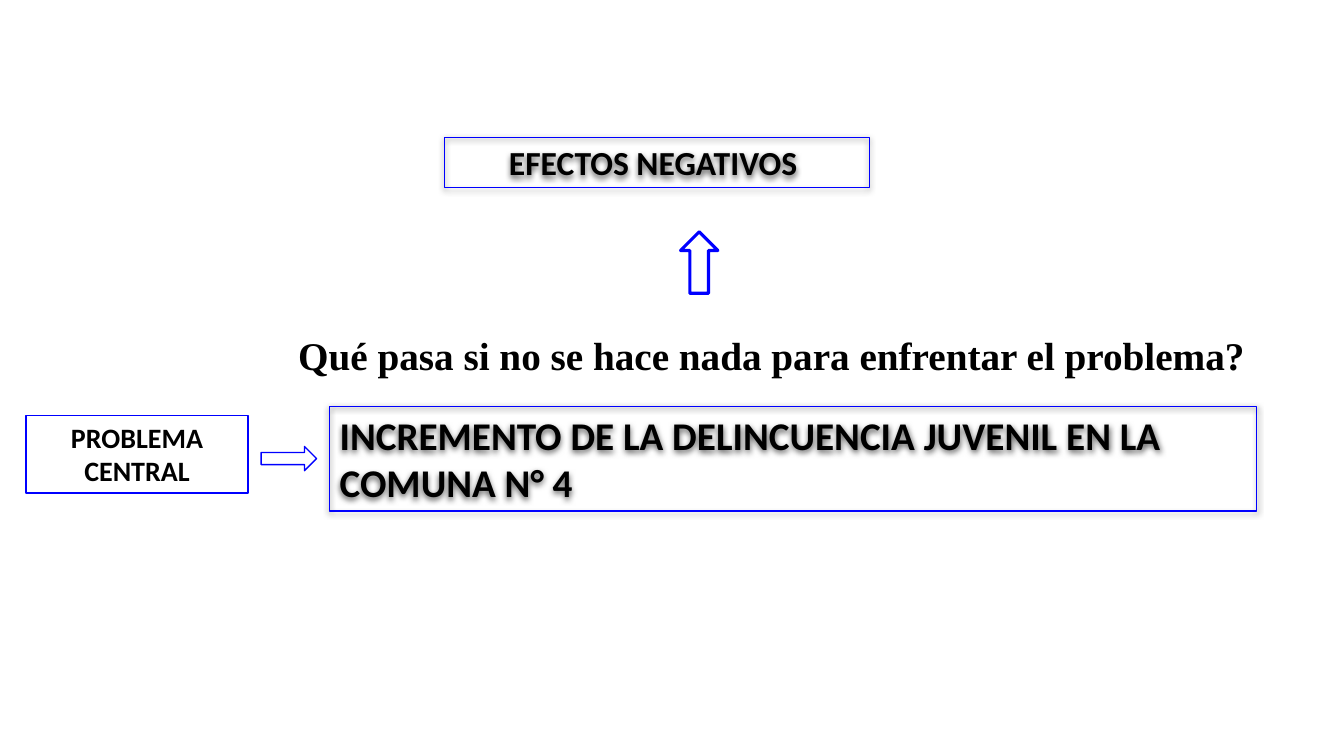
from lxml.etree import SubElement
from pptx import Presentation
from pptx.dml.color import RGBColor
from pptx.enum.shapes import MSO_SHAPE as Shape
from pptx.enum.text import MSO_ANCHOR as Anchor, MSO_AUTO_SIZE as AutoSize, PP_ALIGN as Align
from pptx.oxml.ns import qn
from pptx.util import Inches, Pt

# Content: lines, place (left, top, width, height), text style, line width, shadow
BOXES = [
    (["INCREMENTO DE LA DELINCUENCIA JUVENIL EN LA COMUNA N° 4"],
     (3.27, 4.03, 9.19, 1.04), "problem", 0.75, True),
    (["PROBLEMA", "CENTRAL"], (0.26, 4.12, 2.2, 0.77), "label", 1, False),
    (["EFECTOS NEGATIVOS "], (4.41, 1.36, 4.21, 0.5), "effects", 0.75, True),
]
QUESTION = ("Qué pasa si no se hace nada para enfrentar el problema?",
            (2.86, 3.24, 10.2, 0.57))
ARROWS = [
    (Shape.UP_ARROW, (6.75, 2.3, 0.37, 0.61), 2.25),
    (Shape.RIGHT_ARROW, (2.59, 4.43, 0.55, 0.24), 1),
]

THEME = {
    "line": RGBColor(0x00, 0x00, 0xFF),
    "text": RGBColor(0x00, 0x00, 0x00),
    "shadow": "000000",
    "problem": ("Calibri", 28, Align.LEFT),
    "label": ("Calibri", 20, Align.CENTER),
    "effects": ("Calibri", 24, Align.CENTER),
    "question": ("Times New Roman", 28, Align.LEFT),
}


def place(at):
    return [Inches(v) for v in at]


def write(sp, lines, style):
    name, size, align = THEME[style]
    tf = sp.text_frame
    frame = {"word_wrap": True, "auto_size": AutoSize.SHAPE_TO_FIT_TEXT,
             "vertical_anchor": Anchor.TOP}
    for key, value in frame.items():
        setattr(tf, key, value)
    for i, line in enumerate(lines):
        p = tf.add_paragraph() if i else tf.paragraphs[0]
        p.alignment = align
        r = p.add_run()
        r.text = line
        for key, value in {"name": name, "size": Pt(size), "bold": True}.items():
            setattr(r.font, key, value)
        r.font.color.rgb = THEME["text"]


def outline(slide, kind, at, width):
    sp = slide.shapes.add_shape(kind, *place(at))
    sp.shadow.inherit = False
    sp.fill.background()
    sp.line.color.rgb = THEME["line"]
    sp.line.width = Pt(width)
    return sp


def drop_shadow(sp):
    effects = sp._element.spPr.find(qn("a:effectLst"))
    shadow = SubElement(effects, qn("a:outerShdw"), blurRad=str(Pt(4.5)),
                        dist=str(Pt(1.5)), dir="5400000", algn="t", rotWithShape="0")
    color = SubElement(shadow, qn("a:srgbClr"), val=THEME["shadow"])
    SubElement(color, qn("a:alpha"), val="63000")


def main():
    prs = Presentation()
    prs.slide_width, prs.slide_height = Inches(13.33), Inches(7.5)
    slide = prs.slides.add_slide(prs.slide_layouts[6])

    # Framed texts
    for lines, at, style, width, shadowed in BOXES:
        sp = outline(slide, Shape.RECTANGLE, at, width)
        write(sp, lines, style)
        if shadowed:
            drop_shadow(sp)

    # Question
    text, at = QUESTION
    write(slide.shapes.add_textbox(*place(at)), [text], "question")

    # Block arrows
    for kind, at, width in ARROWS:
        outline(slide, kind, at, width)

    prs.save("out.pptx")


if __name__ == "__main__":
    main()
